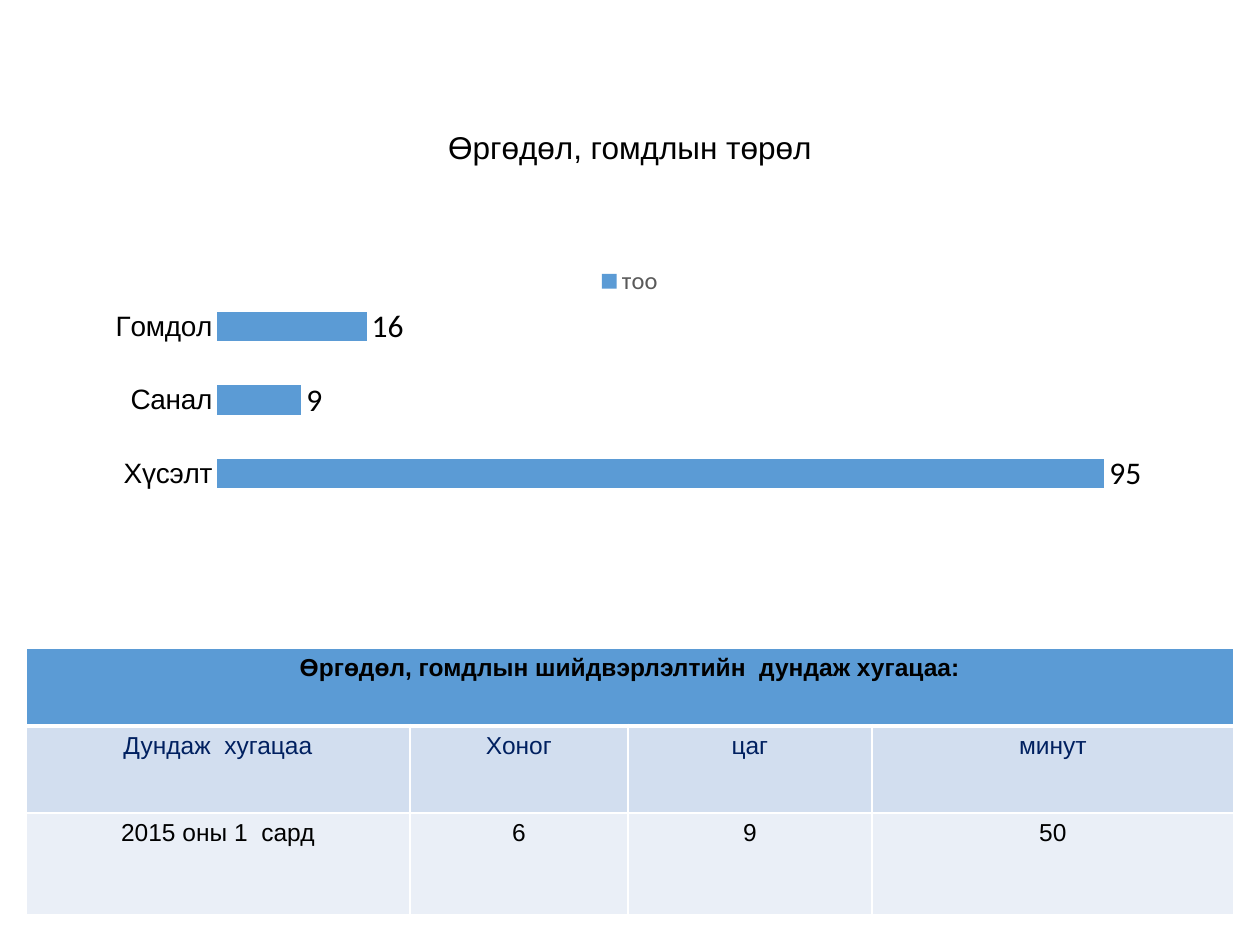
from lxml import etree
from pptx import Presentation
from pptx.chart.data import CategoryChartData
from pptx.dml.color import RGBColor
from pptx.enum.chart import (XL_CHART_TYPE, XL_LABEL_POSITION,
                             XL_LEGEND_POSITION, XL_TICK_MARK)
from pptx.enum.text import MSO_ANCHOR, PP_ALIGN
from pptx.oxml import parse_xml
from pptx.oxml.ns import nsdecls, qn
from pptx.util import Pt

PX = 914400 / 126
BAR = XL_CHART_TYPE.BAR_CLUSTERED
OUTSIDE_END = XL_LABEL_POSITION.OUTSIDE_END
LEGEND_TOP = XL_LEGEND_POSITION.TOP
NO_TICK = XL_TICK_MARK.NONE
MIDDLE = MSO_ANCHOR.MIDDLE
CENTER = PP_ALIGN.CENTER

BLACK = RGBColor(0x00, 0x00, 0x00)
GREY = RGBColor(0x59, 0x59, 0x59)
NAVY = RGBColor(0x00, 0x20, 0x60)
BLUE = RGBColor(0x5B, 0x9B, 0xD5)
PALE_BLUE = RGBColor(0xD2, 0xDE, 0xEF)
PALEST_BLUE = RGBColor(0xEA, 0xEF, 0xF7)

TITLE_BOX = (87, 50, 1086, 198)
CHART_BOX = (87, 252, 1086, 344)
TABLE_BOX = (26, 648, 1208, 267)

REQUEST_COUNTS = {"Хүсэлт": 95, "Санал": 9, "Гомдол": 16}
PLOT_AREA = {"x": 0.12, "y": 0.11, "w": 0.86, "h": 0.64}

COLUMN_WIDTHS = (384, 218, 244, 362)
ROW_HEIGHTS = (78, 87, 102)
DURATION_ROWS = (
    (("Өргөдөл, гомдлын шийдвэрлэлтийн  дундаж хугацаа:",), BLUE, BLACK, True),
    (("Дундаж  хугацаа", "Хоног", "цаг", "минут"), PALE_BLUE, NAVY, False),
    (("2015 оны 1  сард", "6", "9", "50"), PALEST_BLUE, BLACK, False),
)


def emu(px):
    return round(px * PX)


def emu_box(box):
    return [emu(length) for length in box]


def style_font(font, size, name, color, bold=False):
    values = {"size": Pt(size), "name": name, "bold": bold}
    for attribute, value in values.items():
        setattr(font, attribute, value)
    font.color.rgb = color


def write_centered(frame, text, size, color, bold=False):
    paragraph = frame.paragraphs[0]
    paragraph.alignment = CENTER
    run = paragraph.add_run()
    run.text = text
    style_font(run.font, size, "Arial", color, bold)
    return paragraph


def add_title(slide, box):
    frame = slide.shapes.add_textbox(*emu_box(box)).text_frame
    frame.word_wrap = True
    frame.vertical_anchor = MIDDLE
    heading = write_centered(frame, "Өргөдөл, гомдлын төрөл", 18, BLACK)
    heading.line_spacing = 0.9


def fix_plot_area(chart):
    """Pin the inner plot area to fractions of the chart."""
    plot_area = chart.element.find(".//" + qn("c:plotArea"))
    for automatic in plot_area.findall(qn("c:layout")):
        plot_area.remove(automatic)
    layout = etree.Element(qn("c:layout"))
    manual = etree.SubElement(layout, qn("c:manualLayout"))
    settings = {"layoutTarget": "inner", "xMode": "edge", "yMode": "edge"}
    for tag, value in {**settings, **PLOT_AREA}.items():
        etree.SubElement(manual, qn("c:" + tag)).set("val", str(value))
    plot_area.insert(0, layout)


def add_request_chart(slide, box):
    counts = CategoryChartData()
    counts.categories = list(REQUEST_COUNTS)
    counts.add_series("тоо", list(REQUEST_COUNTS.values()))
    chart = slide.shapes.add_chart(BAR, *emu_box(box), counts).chart
    chart.has_title = False
    style_font(chart.font, 10, "Calibri", BLACK)

    chart.has_legend = True
    chart.legend.position = LEGEND_TOP
    chart.legend.include_in_layout = False
    style_font(chart.legend.font, 14, "Calibri", GREY)

    categories = chart.category_axis
    categories.major_tick_mark = categories.minor_tick_mark = NO_TICK
    categories.format.line.fill.background()
    style_font(categories.tick_labels.font, 16, "Arial", BLACK)

    values = chart.value_axis
    values.visible = values.has_major_gridlines = False
    values.minimum_scale, values.maximum_scale = 0, 100

    bars = chart.plots[0]
    bars.gap_width = 150
    bars.vary_by_categories = False
    bars.series[0].format.fill.solid()
    bars.series[0].format.fill.fore_color.rgb = BLUE
    bars.has_data_labels = True
    bars.data_labels.show_value = True
    bars.data_labels.position = OUTSIDE_END
    style_font(bars.data_labels.font, 18, "Calibri", BLACK)
    fix_plot_area(chart)


def set_borders(cell, top, bottom):
    """Draw white cell borders; top and bottom widths are in points."""
    widths = {"lnL": 1, "lnR": 1, "lnT": top, "lnB": bottom}
    properties = cell._tc.get_or_add_tcPr()
    for index, (side, width) in enumerate(widths.items()):
        properties.insert(index, parse_xml(
            f'<a:{side} {nsdecls("a")} w="{Pt(width)}"><a:solidFill>'
            f'<a:srgbClr val="FFFFFF"/></a:solidFill></a:{side}>'))


def add_duration_table(slide, box):
    table = slide.shapes.add_table(len(ROW_HEIGHTS), len(COLUMN_WIDTHS),
                                   *emu_box(box)).table
    for column, width in zip(table.columns, COLUMN_WIDTHS):
        column.width = emu(width)
    for row, height in zip(table.rows, ROW_HEIGHTS):
        row.height = emu(height)
    table.cell(0, 0).merge(table.cell(0, len(COLUMN_WIDTHS) - 1))

    for index, (texts, fill, color, bold) in enumerate(DURATION_ROWS):
        for cell in table.rows[index].cells:
            cell.fill.solid()
            cell.fill.fore_color.rgb = fill
            set_borders(cell, top=3 if index == 1 else 1,
                        bottom=3 if index == 0 else 1)
        for cell, text in zip(table.rows[index].cells, texts):
            write_centered(cell.text_frame, text, 14, color, bold)


def main():
    presentation = Presentation()
    presentation.slide_width = emu(1260)
    presentation.slide_height = emu(945)
    slide = presentation.slides.add_slide(presentation.slide_layouts[6])
    add_title(slide, TITLE_BOX)
    add_request_chart(slide, CHART_BOX)
    add_duration_table(slide, TABLE_BOX)
    presentation.save("out.pptx")


if __name__ == "__main__":
    main()
